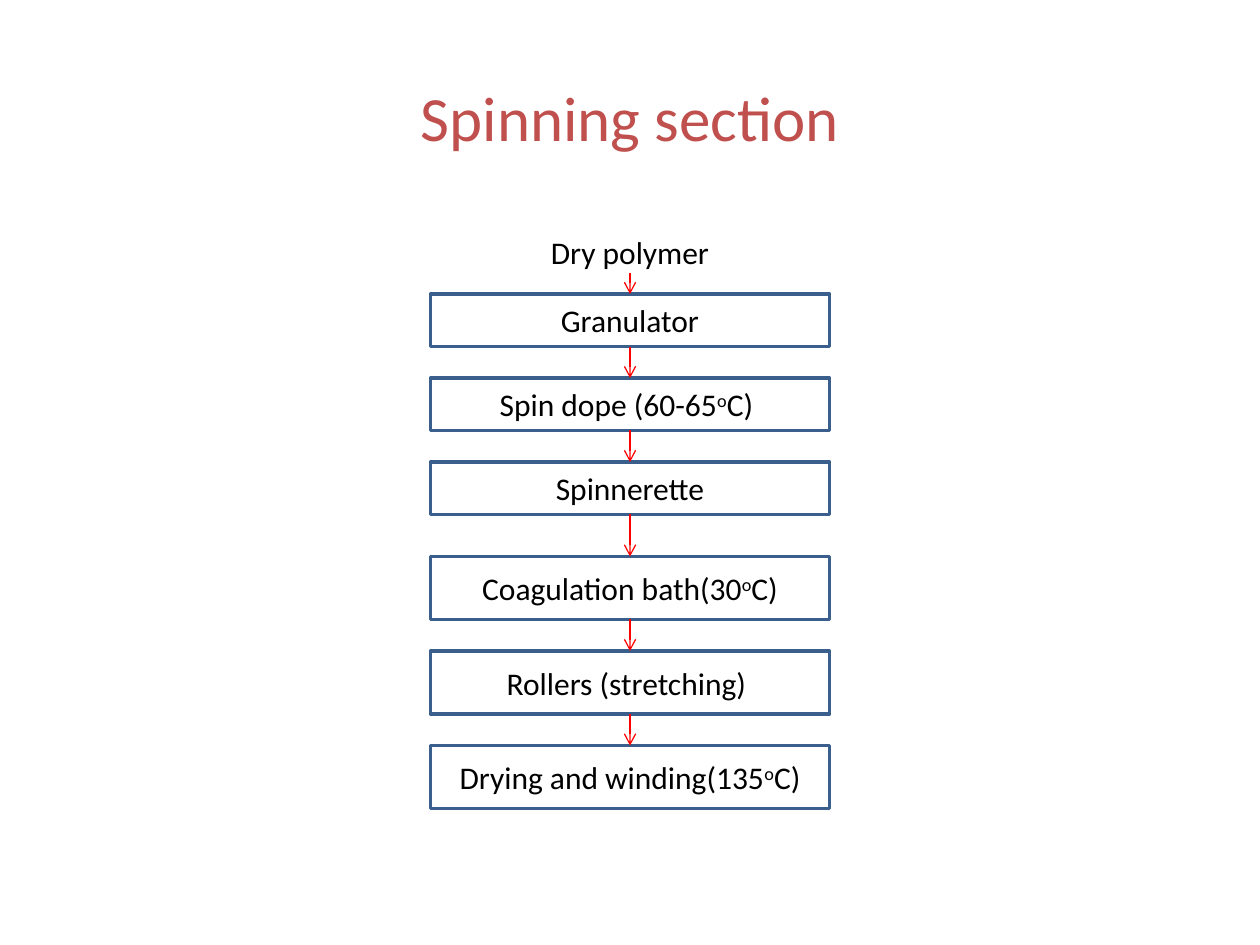
"""Build the spinning section slide: a vertical flow of process steps."""
from itertools import pairwise
from typing import NamedTuple

from lxml import etree
from pptx import Presentation
from pptx.dml.color import RGBColor
from pptx.enum.shapes import MSO_CONNECTOR, MSO_SHAPE
from pptx.enum.text import MSO_ANCHOR, PP_ALIGN
from pptx.oxml.ns import qn
from pptx.shapes.autoshape import Shape
from pptx.util import Inches, Pt

RECTANGLE = MSO_SHAPE.RECTANGLE
STRAIGHT = MSO_CONNECTOR.STRAIGHT
CENTER = PP_ALIGN.CENTER
MIDDLE = MSO_ANCHOR.MIDDLE

WHITE = RGBColor(0xFF, 0xFF, 0xFF)
BLACK = RGBColor(0x00, 0x00, 0x00)
BLUE = RGBColor(0x3A, 0x5F, 0x8C)
RED = RGBColor(0xFF, 0x00, 0x00)
BRICK = RGBColor(0xC0, 0x50, 0x4D)

FONT = "Calibri"
SLIDE_WIDTH, SLIDE_HEIGHT = Inches(10), Inches(7.5)
COLUMNS = 120
CELL = SLIDE_WIDTH // COLUMNS
TOP_SIDE, BOTTOM_SIDE = 0, 2


class Step(NamedTuple):
    """A process step placed by grid rows; a degree mark joins its wording."""

    wording: tuple[str, ...]
    row: int
    rows: int
    columns: int = 38
    outline: RGBColor = BLUE


STEPS = (
    Step(("Dry polymer",), 22, 4, 20, WHITE),
    Step(("Granulator",), 28, 5),
    Step(("Spin dope (60-65", "C) "), 36, 5),
    Step(("Spinnerette",), 44, 5),
    Step(("Coagulation bath(30", "C)"), 53, 6),
    Step(("Rollers (stretching) ",), 62, 6),
    Step(("Drying and winding(135", "C)"), 71, 6),
)


def write_step_text(box: Shape, wording: tuple[str, ...]) -> None:
    """Write the wording with a raised degree mark between its pieces."""
    box.text_frame.vertical_anchor = MIDDLE
    box.text_frame.word_wrap = True
    paragraph = box.text_frame.paragraphs[0]
    paragraph.text = wording[0]
    paragraph.alignment = CENTER
    for ending in wording[1:]:
        paragraph.add_run().text = "o"
        paragraph.add_run().text = ending
    for run in paragraph.runs:
        run.font.name = FONT
        run.font.size = Pt(18)
        run.font.color.rgb = BLACK
    for properties in box.element.xpath(".//a:rPr")[1::2]:
        properties.set("baseline", "30000")


def add_step(slide, step: Step) -> Shape:
    """Draw one step centred on the slide."""
    left = (COLUMNS - step.columns) // 2
    box = slide.shapes.add_shape(
        RECTANGLE, left * CELL, step.row * CELL, step.columns * CELL, step.rows * CELL
    )
    box.shadow.inherit = False
    box.fill.solid()
    box.fill.fore_color.rgb = WHITE
    box.line.color.rgb = step.outline
    box.line.width = Pt(2)
    write_step_text(box, step.wording)
    return box


def add_arrow(slide, source: Shape, target: Shape) -> None:
    """Join two steps with a downward arrow."""
    arrow = slide.shapes.add_connector(STRAIGHT, 0, 0, 0, 0)
    arrow.begin_connect(source, BOTTOM_SIDE)
    arrow.end_connect(target, TOP_SIDE)
    arrow.line.color.rgb = RED
    arrow.line.width = Pt(0.75)
    properties = arrow.element.spPr
    etree.SubElement(properties.find(qn("a:ln")), qn("a:tailEnd"), type="arrow")
    etree.SubElement(properties, qn("a:effectLst"))


def add_title(slide, text: str) -> None:
    """Place and format the slide title."""
    title = slide.shapes.title
    title.left, title.top = int(SLIDE_WIDTH * 0.05), int(SLIDE_HEIGHT * 0.04)
    title.width, title.height = int(SLIDE_WIDTH * 0.9), 15 * CELL
    title.text_frame.text = text
    title.text_frame.vertical_anchor = MIDDLE
    paragraph = title.text_frame.paragraphs[0]
    paragraph.alignment = CENTER
    font = paragraph.runs[0].font
    font.name = FONT
    font.size = Pt(36)
    font.color.rgb = BRICK


def main() -> None:
    """Build and save the presentation."""
    presentation = Presentation()
    presentation.slide_width = SLIDE_WIDTH
    presentation.slide_height = SLIDE_HEIGHT
    slide = presentation.slides.add_slide(presentation.slide_layouts[5])
    add_title(slide, "Spinning section")
    boxes = [add_step(slide, step) for step in STEPS]
    for source, target in pairwise(boxes):
        add_arrow(slide, source, target)
    presentation.save("out.pptx")


if __name__ == "__main__":
    main()
